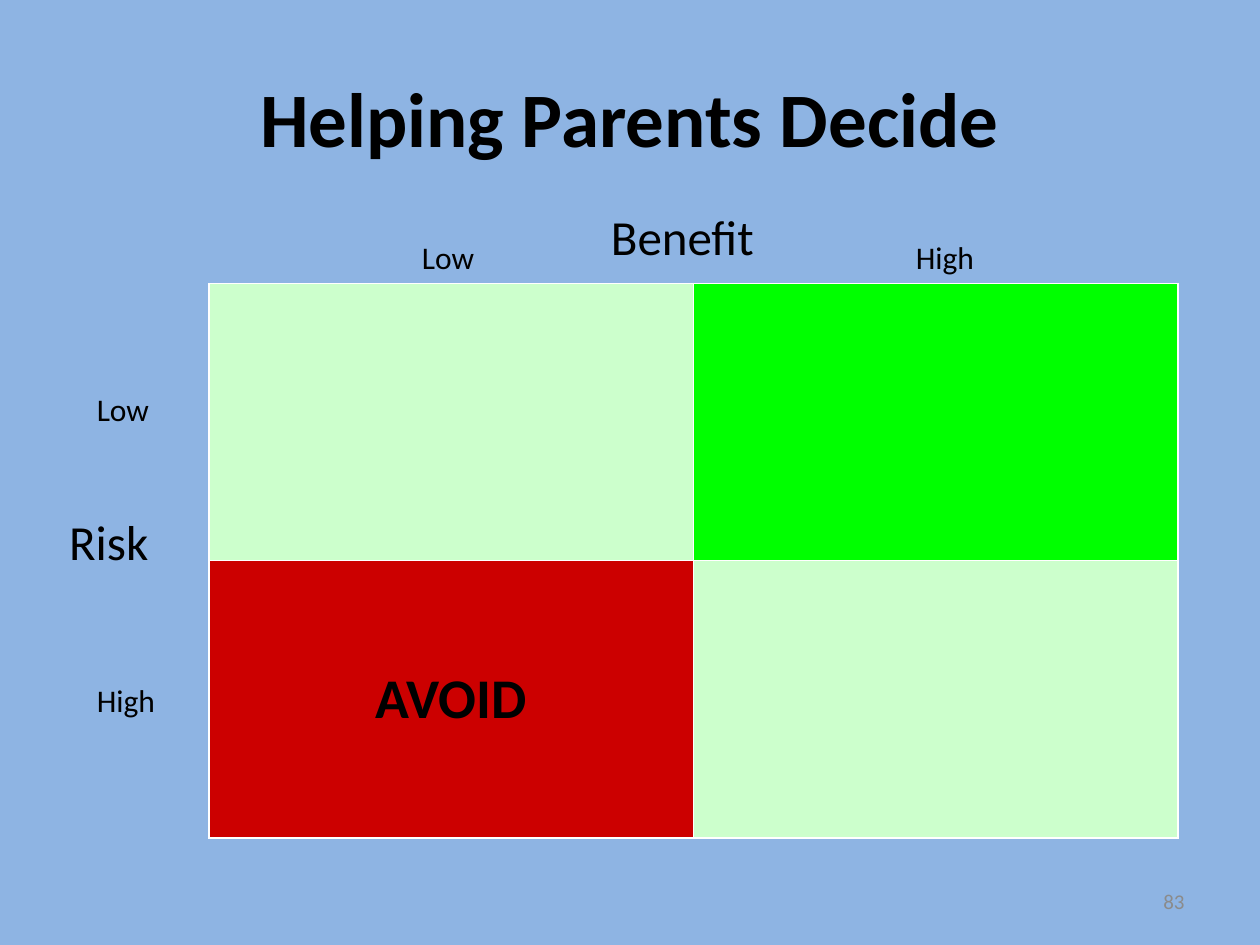
from dataclasses import dataclass

from lxml import etree
from pptx import Presentation
from pptx.dml.color import RGBColor
from pptx.enum.text import MSO_ANCHOR, PP_ALIGN
from pptx.oxml.ns import qn
from pptx.util import Inches, Pt

MIDDLE, TOP = MSO_ANCHOR.MIDDLE, MSO_ANCHOR.TOP
LEFT, CENTER, RIGHT = PP_ALIGN.LEFT, PP_ALIGN.CENTER, PP_ALIGN.RIGHT
TITLE_ONLY = 5


@dataclass(frozen=True)
class Theme:
    """Colours, font and type sizes of the slide."""
    font: str = "Calibri"
    background: str = "8EB4E3"
    text: str = "000000"
    muted: str = "8B8B8B"
    border: str = "FFFFFF"
    neutral: str = "CCFFCC"
    good: str = "00FF00"
    bad: str = "CC0000"
    title: int = 44
    cell: int = 32
    axis: int = 28
    level: int = 18
    number: int = 12


@dataclass(frozen=True)
class Box:
    """A rectangle in inches."""
    left: float
    top: float
    width: float
    height: float

    def inches(self):
        """Return the four lengths for python-pptx."""
        return [Inches(value) for value in (self.left, self.top, self.width, self.height)]

    def offset(self, right, down, width, height):
        """Return a box placed relative to this one's corner."""
        return Box(self.left + right, self.top + down, width, height)


THEME = Theme()
SLIDE = Box(0, 0, 10, 7.5)


def write(frame, text, size, align=LEFT, bold=False, color=THEME.text):
    """Put one formatted paragraph in a text frame."""
    paragraph = frame.paragraphs[0]
    paragraph.text = text
    paragraph.alignment = align
    font = paragraph.font
    font.name, font.size, font.bold = THEME.font, Pt(size), bold
    font.color.rgb = RGBColor.from_string(color)


def add_label(slide, box, text, size, align=LEFT, anchor=TOP, color=THEME.text):
    """Add a text box with one line."""
    frame = slide.shapes.add_textbox(*box.inches()).text_frame
    frame.word_wrap = True
    frame.vertical_anchor = anchor
    write(frame, text, size, align, color=color)


def add_title(slide, box, text):
    """Place and format the title placeholder."""
    title = slide.shapes.title
    title.left, title.top, title.width, title.height = box.inches()
    title.text_frame.vertical_anchor = MIDDLE
    write(title.text_frame, text, THEME.title, CENTER, bold=True)


def style_cell(cell, fill):
    """Give a cell its borders and fill."""
    properties = cell._tc.get_or_add_tcPr()
    for side in ("a:lnL", "a:lnR", "a:lnT", "a:lnB"):
        line = etree.SubElement(properties, qn(side), w=str(Pt(1)))
        solid = etree.SubElement(line, qn("a:solidFill"))
        etree.SubElement(solid, qn("a:srgbClr"), val=THEME.border)
    cell.fill.solid()
    cell.fill.fore_color.rgb = RGBColor.from_string(fill)


def add_matrix(slide, box):
    """Add the two-by-two table of risk against benefit."""
    fills = ((THEME.neutral, THEME.good), (THEME.bad, THEME.neutral))
    table = slide.shapes.add_table(2, 2, *box.inches()).table
    for row, row_fills in enumerate(fills):
        for column, fill in enumerate(row_fills):
            style_cell(table.cell(row, column), fill)
    avoid = table.cell(1, 0)
    avoid.vertical_anchor = MIDDLE
    write(avoid.text_frame, "AVOID", THEME.cell, CENTER, bold=True)


def add_axes(slide, matrix):
    """Label the columns and rows around the matrix."""
    add_label(slide, matrix.offset(3.09, -0.66, 2.55, 0.57), "Benefit", THEME.axis)
    add_label(slide, matrix.offset(-1.21, 1.76, 1.05, 0.57), "Risk", THEME.axis)
    levels = (
        ("Low", -0.99, 0.8),
        ("High", -0.99, 3.11),
        ("High", 5.51, -0.41),
        ("Low", 1.59, -0.41),
    )
    for text, right, down in levels:
        add_label(slide, matrix.offset(right, down, 1, 0.4), text, THEME.level)


def main():
    """Build and save the slide."""
    presentation = Presentation()
    presentation.slide_width = Inches(SLIDE.width)
    presentation.slide_height = Inches(SLIDE.height)
    slide = presentation.slides.add_slide(presentation.slide_layouts[TITLE_ONLY])
    slide.background.fill.solid()
    slide.background.fill.fore_color.rgb = RGBColor.from_string(THEME.background)

    matrix = Box(1.66, 2.25, 7.69, 4.4)
    add_title(slide, Box(0.5, 0.3, 9, 1.25), "Helping Parents Decide")
    add_matrix(slide, matrix)
    add_axes(slide, matrix)
    add_label(slide, Box(7.17, 6.95, 2.33, 0.4), "83", THEME.number, RIGHT, MIDDLE, THEME.muted)
    presentation.save("out.pptx")


if __name__ == "__main__":
    main()
